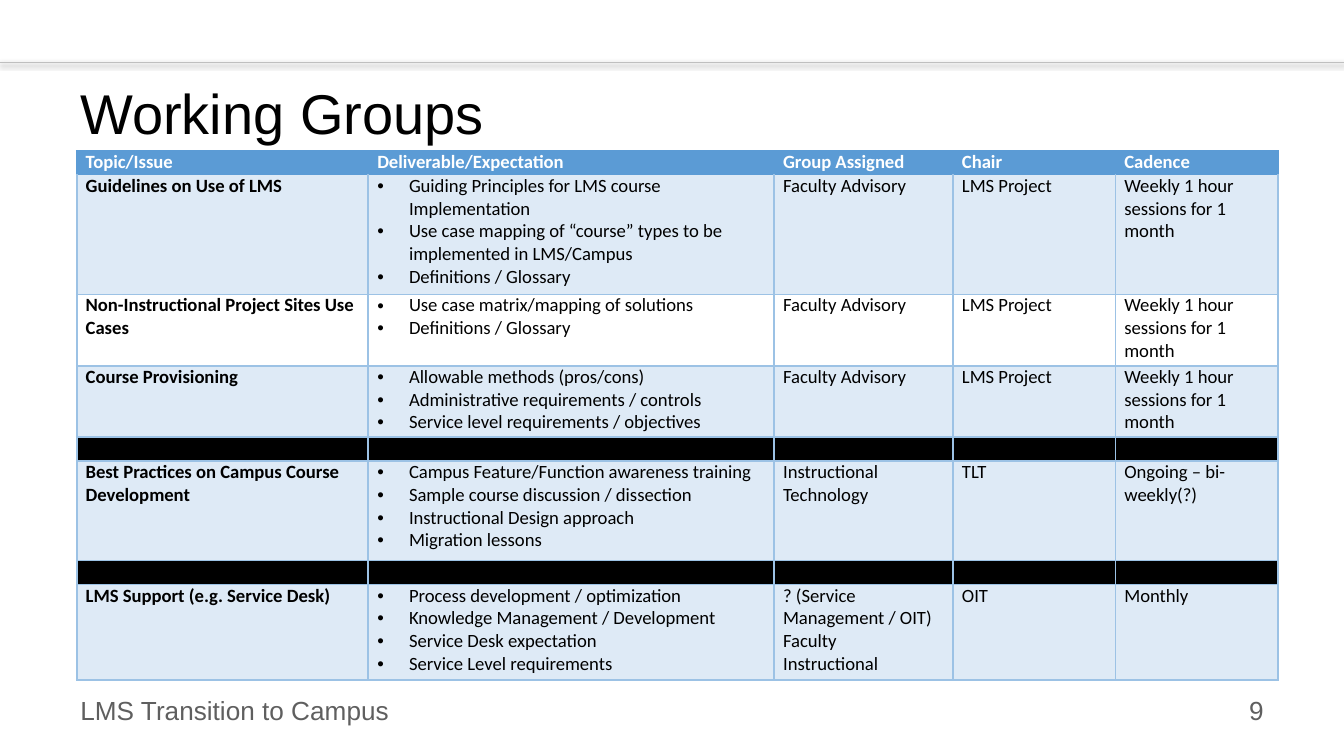
"""Build the Working Groups slide with its table of topics, groups and cadence."""
from lxml import etree
from pptx import Presentation
from pptx import util as u
from pptx.dml.color import RGBColor
from pptx.enum import shapes, text
from pptx.oxml import parse_xml
from pptx.oxml.ns import nsdecls, qn

THEME = {
    "title": {"name": "Arial", "size": u.Pt(30), "color": "000000"},
    "footer": {"name": "Arial", "size": u.Pt(14), "color": "5F5F5F"},
    "header": {"name": "Calibri", "size": u.Pt(10), "bold": True, "color": "FFFFFF"},
    "topic": {"name": "Calibri", "size": u.Pt(10), "bold": True, "color": "000000"},
    "body": {"name": "Calibri", "size": u.Pt(10), "bold": False, "color": "000000"},
    "accent": "5B9BD5",
    "grid": "9CC2E5",
    "band": "DEEAF6",
    "plain": "FFFFFF",
    "divider": "000000",
    "rule": "BFBFBF",
}


def write(paragraph, words, style):
    run = paragraph.add_run()
    run.text = words
    for name, value in THEME[style].items():
        if name == "color":
            run.font.color.rgb = RGBColor.from_string(value)
        else:
            setattr(run.font, name, value)


presentation = Presentation()
presentation.slide_width, presentation.slide_height = u.Cm(25.4), u.Cm(14.28)
slide = presentation.slides.add_slide(presentation.slide_layouts[6])

rule = slide.shapes.add_connector(
    shapes.MSO_CONNECTOR.STRAIGHT, 0, u.Cm(1.17), presentation.slide_width, u.Cm(1.17))
rule.line.width = u.Pt(0.25)
rule.line.color.rgb = RGBColor.from_string(THEME["rule"])
rule._element.spPr.append(parse_xml(
    f'<a:effectLst {nsdecls("a")}><a:outerShdw blurRad="{u.Pt(3.1)}" dist="{u.Pt(1.6)}" '
    'dir="5400000" rotWithShape="0"><a:srgbClr val="000000"><a:alpha val="38000"/>'
    '</a:srgbClr></a:outerShdw></a:effectLst>'))

labels = [
    ("Working Groups", "title", (1.27, 1.27, 22.86, 1.68),
     text.PP_ALIGN.LEFT, text.MSO_ANCHOR.MIDDLE),
    ("LMS Transition to Campus", "footer", (1.27, 13, 6.35, 0.86),
     text.PP_ALIGN.LEFT, text.MSO_ANCHOR.TOP),
    ("9", "footer", (18.21, 13, 5.92, 0.86),
     text.PP_ALIGN.RIGHT, text.MSO_ANCHOR.TOP),
]
for words, style, place, alignment, anchor in labels:
    frame = slide.shapes.add_textbox(*map(u.Cm, place)).text_frame
    for name, value in {"word_wrap": True, "vertical_anchor": anchor}.items():
        setattr(frame, name, value)
    frame.paragraphs[0].alignment = alignment
    write(frame.paragraphs[0], words, style)

FACULTY = ["Faculty Advisory", "LMS Project", "Weekly 1 hour sessions for 1 month"]
DIVIDER = [""] * 5
rows = [
    ["Topic/Issue", "Deliverable/Expectation", "Group Assigned", "Chair", "Cadence"],
    ["Guidelines on Use of LMS",
     "Guiding Principles for LMS course Implementation\n"
     "Use case mapping of “course” types to be implemented in LMS/Campus\n"
     "Definitions / Glossary", *FACULTY],
    ["Non-Instructional Project Sites Use Cases",
     "Use case matrix/mapping of solutions\nDefinitions / Glossary", *FACULTY],
    ["Course Provisioning",
     "Allowable methods (pros/cons)\nAdministrative requirements / controls\n"
     "Service level requirements / objectives", *FACULTY],
    DIVIDER,
    ["Best Practices on Campus Course Development",
     "Campus Feature/Function awareness training\nSample course discussion / dissection\n"
     "Instructional Design approach\nMigration lessons",
     "Instructional Technology", "TLT", "Ongoing – bi-weekly(?)"],
    DIVIDER,
    ["LMS Support (e.g. Service Desk)",
     "Process development / optimization\nKnowledge Management / Development\n"
     "Service Desk expectation\nService Level requirements",
     "? (Service Management / OIT)\nFaculty\nInstructional", "OIT", "Monthly"],
]
fills = ["accent", "band", "plain", "band", "divider", "band", "divider", "band"]
widths = [5.51, 7.67, 3.38, 3.07, 3.07]
heights = [0.45, 2.26, 1.35, 1.35, 0.45, 1.88, 0.45, 1.8]

table = slide.shapes.add_table(
    len(rows), len(widths), u.Cm(1.45), u.Cm(2.85),
    u.Cm(sum(widths)), u.Cm(sum(heights))).table
table.first_row = table.horz_banding = False
for column, width in zip(table.columns, widths):
    column.width = u.Cm(width)
for row, height in zip(table.rows, heights):
    row.height = u.Cm(height)

cell_format = {"margin_left": u.Cm(0.17), "margin_right": u.Cm(0.17),
               "margin_top": 0, "margin_bottom": 0}
for row_index, (row, fill) in enumerate(zip(rows, fills)):
    for column_index, words in enumerate(row):
        cell = table.cell(row_index, column_index)
        for name, value in cell_format.items():
            setattr(cell, name, value)
        cell.fill.solid()
        cell.fill.fore_color.rgb = RGBColor.from_string(THEME[fill])
        for position, side in enumerate(["lnL", "lnR", "lnT", "lnB"]):
            accented = row_index == 0 or (row_index == 1 and side == "lnT")
            color = THEME["accent" if accented else "grid"]
            cell._tc.tcPr.insert(position, parse_xml(
                f'<a:{side} {nsdecls("a")} w="{u.Pt(1)}"><a:solidFill>'
                f'<a:srgbClr val="{color}"/></a:solidFill></a:{side}>'))

        style = "header" if row_index == 0 else "topic" if column_index == 0 else "body"
        for line_index, line in enumerate(words.split("\n")):
            frame = cell.text_frame
            paragraph = frame.add_paragraph() if line_index else frame.paragraphs[0]
            if not line:
                etree.SubElement(paragraph._p, qn("a:endParaRPr"), sz="1000")
                continue
            if row_index and column_index == 1:
                properties = paragraph._p.get_or_add_pPr()
                properties.set("marL", str(u.Cm(0.6)))
                properties.set("indent", str(-u.Cm(0.6)))
                etree.SubElement(properties, qn("a:buFont"), typeface="Arial")
                etree.SubElement(properties, qn("a:buChar"), char="•")
            write(paragraph, line, style)

presentation.save("out.pptx")
